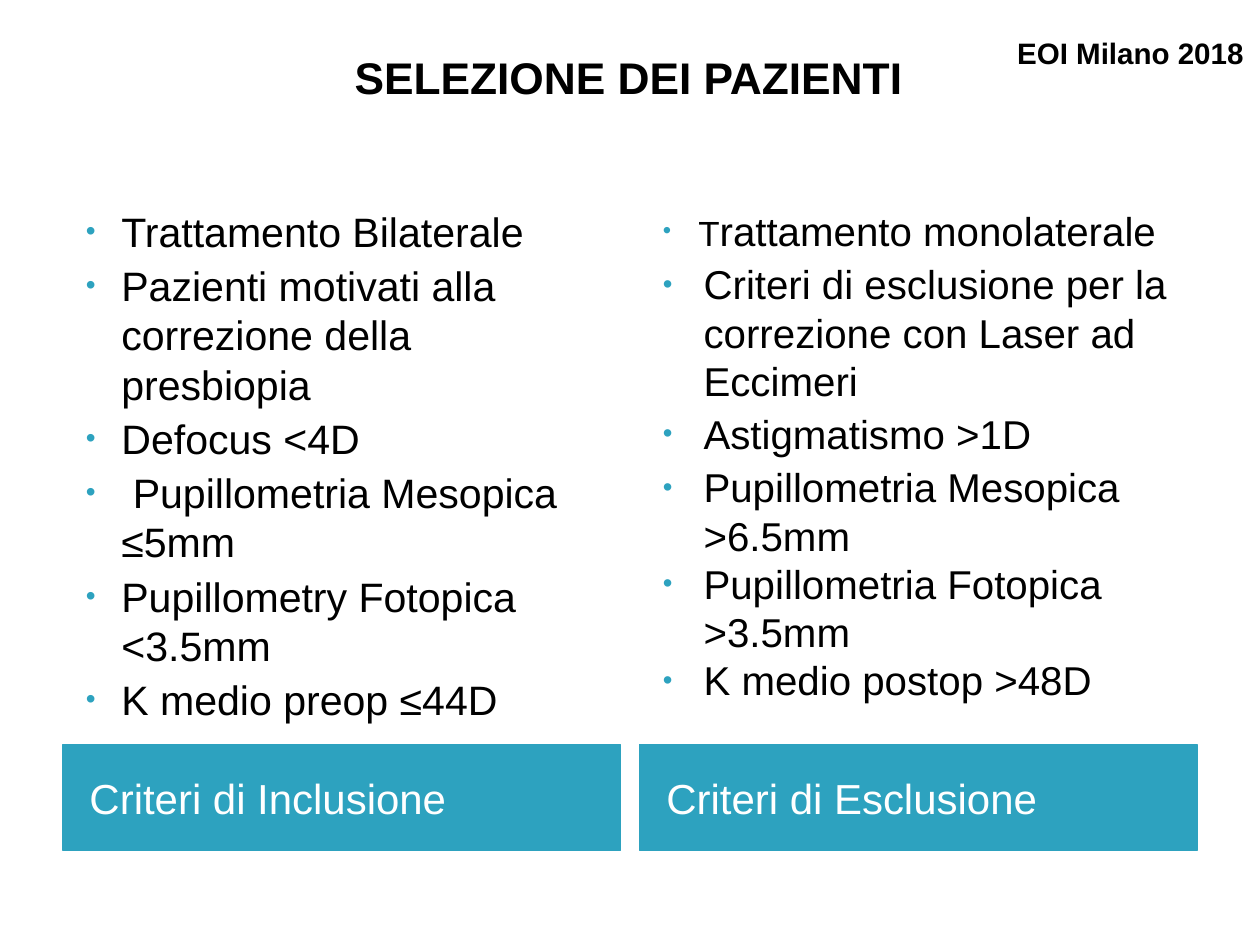
from lxml import etree
from pptx import Presentation
from pptx.dml.color import RGBColor
from pptx.enum import shapes, text
from pptx.oxml.ns import qn
from pptx.util import Inches, Pt

FONT = "Arial"
COLORS = {"teal": "2DA2BF", "black": "000000", "white": "FFFFFF"}
COLUMN_LEFTS = (0.71, 7.22)
COLUMN_WIDTH = 6.29
COLUMN_INSETS = (0.14, 0.08, 0.14, 0.08)
LABEL_INSETS = (0.3, 0.08, 0.14, 0.08)

# Each item: text, indent in inches, space before in points
INCLUSION = [(item, 0.4, 4) for item in (
    "Trattamento Bilaterale",
    "Pazienti motivati alla correzione della presbiopia",
    "Defocus <4D",
    " Pupillometria Mesopica ≤5mm",
    "Pupillometry Fotopica <3.5mm",
    "K medio preop ≤44D",
)]
EXCLUSION = [
    ("Trattamento monolaterale", 0.4, 4),
    ("Criteri di esclusione per la correzione con Laser ad Eccimeri", 0.46, 4),
    ("Astigmatismo >1D", 0.46, 4),
    ("Pupillometria Mesopica >6.5mm", 0.46, 4),
    ("Pupillometria Fotopica >3.5mm", 0.46, 0),
    ("K medio postop >48D", 0.46, 0),
]


def color(name):
    return RGBColor.from_string(COLORS[name])


def set_font(font, size, color_name="black", bold=False):
    font.name, font.size, font.bold = FONT, Pt(size), bold
    font.color.rgb = color(color_name)


def set_frame(box, insets, anchor):
    frame = box.text_frame
    frame.word_wrap = True
    frame.vertical_anchor = anchor
    (frame.margin_left, frame.margin_top,
     frame.margin_right, frame.margin_bottom) = map(Inches, insets)
    return frame


def add_heading(page, place, wording, size, alignment):
    box = page.shapes.add_textbox(*map(Inches, place))
    frame = set_frame(box, (0, 0, 0, 0), text.MSO_ANCHOR.MIDDLE)
    para = frame.paragraphs[0]
    para.text = wording
    para.alignment = alignment
    set_font(para.font, size, bold=True)


def add_bullet(para, indent):
    properties = para._p.get_or_add_pPr()
    properties.set("marL", str(Inches(indent + 0.12)))
    properties.set("indent", str(-Inches(indent)))
    bullet_color = etree.SubElement(properties, qn("a:buClr"))
    etree.SubElement(bullet_color, qn("a:srgbClr"), val=COLORS["teal"])
    etree.SubElement(properties, qn("a:buSzPct"), val="68000")
    etree.SubElement(properties, qn("a:buFont"), typeface=FONT)
    etree.SubElement(properties, qn("a:buChar"), char="•")


def add_criteria(page, left, height, items, size, initial_size):
    box = page.shapes.add_textbox(
        Inches(left), Inches(2.25), Inches(COLUMN_WIDTH), Inches(height))
    frame = set_frame(box, COLUMN_INSETS, text.MSO_ANCHOR.TOP)
    for index, (wording, indent, space) in enumerate(items):
        para = frame.paragraphs[0] if index == 0 else frame.add_paragraph()
        para.space_before = Pt(space)
        add_bullet(para, indent)
        # The first letter of a list may have its own size
        if index == 0 and initial_size != size:
            parts = [(wording[0], initial_size), (wording[1:], size)]
        else:
            parts = [(wording, size)]
        for part, part_size in parts:
            span = para.add_run()
            span.text = part
            set_font(span.font, part_size)


def add_label(page, left, wording):
    bar = page.shapes.add_shape(
        shapes.MSO_SHAPE.RECTANGLE,
        Inches(left), Inches(8.41), Inches(COLUMN_WIDTH), Inches(1.19))
    bar.shadow.inherit = False
    bar.fill.solid()
    bar.fill.fore_color.rgb = color("teal")
    bar.line.color.rgb = color("teal")
    bar.line.width = Pt(1.08)
    para = set_frame(bar, LABEL_INSETS, text.MSO_ANCHOR.MIDDLE).paragraphs[0]
    para.text = wording
    para.alignment = text.PP_ALIGN.LEFT
    para.space_before = Pt(4)
    set_font(para.font, 34.1, "white")


def main():
    deck = Presentation()
    deck.slide_width, deck.slide_height = Inches(14.22), Inches(10.67)
    page = deck.slides.add_slide(deck.slide_layouts[6])

    # Labels under the columns
    for left, label in zip(COLUMN_LEFTS,
                           ("Criteri di Inclusione", "Criteri di Esclusione")):
        add_label(page, left, label)

    # Lists of criteria
    add_criteria(page, COLUMN_LEFTS[0], 6.59, INCLUSION, 33.4, 33.4)
    add_criteria(page, COLUMN_LEFTS[1], 6.27, EXCLUSION, 32.7, 28.4)

    # Title and event
    add_heading(page, (3.93, 0.51, 6.33, 0.71), "SELEZIONE DEI PAZIENTI",
                36, text.PP_ALIGN.CENTER)
    add_heading(page, (11.48, 0.4, 2.74, 0.4), "EOI Milano 2018",
                24, text.PP_ALIGN.LEFT)

    deck.save("out.pptx")


if __name__ == "__main__":
    main()
